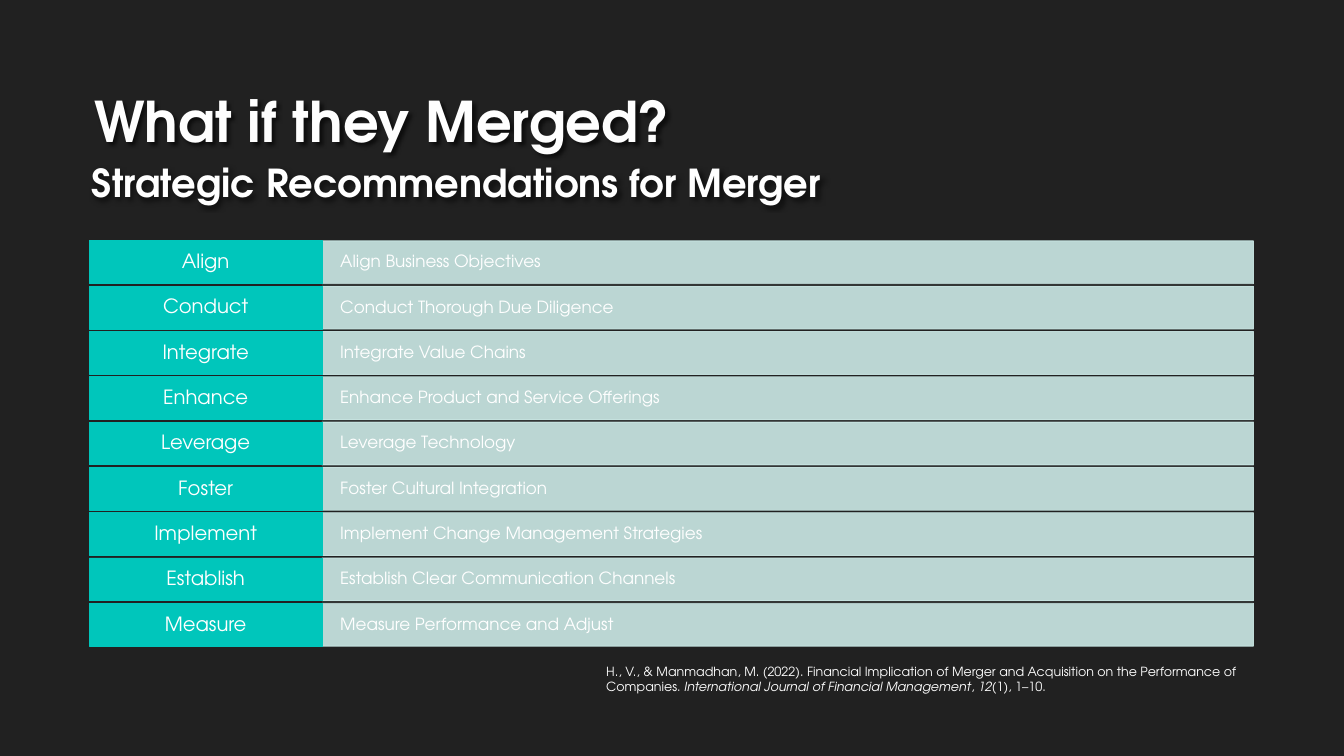
from dataclasses import dataclass

from lxml import etree
from pptx import Presentation
from pptx.dml.color import RGBColor
from pptx.enum.shapes import MSO_SHAPE
from pptx.enum.text import MSO_ANCHOR, MSO_AUTO_SIZE, PP_ALIGN
from pptx.oxml.ns import qn
from pptx.util import Pt

RECT = MSO_SHAPE.RECTANGLE
LEFT, CENTER = PP_ALIGN.LEFT, PP_ALIGN.CENTER
MIDDLE, BOTTOM, TOP = MSO_ANCHOR.MIDDLE, MSO_ANCHOR.BOTTOM, MSO_ANCHOR.TOP
NO_AUTOFIT, GROW = MSO_AUTO_SIZE.NONE, MSO_AUTO_SIZE.SHAPE_TO_FIT_TEXT

FONT = "TeX Gyre Adventor"
COLORS = {
    "background": "212121",
    "title": "FEFEFE",
    "text": "FFFFFF",
    "action": "00C6BB",
    "detail": "CCEAE7",
    "shadow": "000000",
}
MARGIN = 127.44
TABLE_TOP = 344.16
ROW_HEIGHT = 61.2
ROW_PITCH = 64.71


@dataclass(frozen=True)
class Column:
    left: float
    width: float
    color: str
    opacity: int
    size: int
    align: PP_ALIGN
    inset_x: float
    inset_y: float


@dataclass(frozen=True)
class Recommendation:
    action: str
    detail: str


ACTION = Column(MARGIN, 332.64, "action", 100, 28, CENTER, 17.28, 5.76)
DETAIL = Column(MARGIN + 332.64, 1330.56, "detail", 90, 24, LEFT, 25.92, 15.84)

RECOMMENDATIONS = [
    Recommendation("Align", "Align Business Objectives"),
    Recommendation("Conduct", "Conduct Thorough Due Diligence"),
    Recommendation("Integrate", "Integrate Value Chains"),
    Recommendation("Enhance", "Enhance Product and Service Offerings"),
    Recommendation("Leverage", "Leverage Technology"),
    Recommendation("Foster", "Foster Cultural Integration"),
    Recommendation("Implement", "Implement Change Management Strategies"),
    Recommendation("Establish", "Establish Clear Communication Channels"),
    Recommendation("Measure", "Measure Performance and Adjust"),
]

CITATION = [
    ("H., V., & Manmadhan, M. (2022). Financial Implication of Merger and "
     "Acquisition on the Performance of Companies. ", False),
    ("International Journal of Financial Management", True),
    (", ", False),
    ("12", True),
    ("(1), 1–10.", False),
]


def rgb(name: str) -> RGBColor:
    return RGBColor.from_string(COLORS[name])


def style_font(font, size: float, color: str = "text", bold: bool = False) -> None:
    font.name = FONT
    font.size = Pt(size)
    font.bold = bold
    font.color.rgb = rgb(color)


def set_frame(frame, anchor: MSO_ANCHOR, inset_x: float, inset_y: float,
              autofit: MSO_AUTO_SIZE = NO_AUTOFIT) -> None:
    frame.word_wrap = True
    frame.auto_size = autofit
    frame.vertical_anchor = anchor
    frame.margin_left = frame.margin_right = Pt(inset_x)
    frame.margin_top = frame.margin_bottom = Pt(inset_y)


def set_opacity(fill_owner, percent: int) -> None:
    for color in fill_owner.iter(qn("a:srgbClr")):
        etree.SubElement(color, qn("a:alpha"), val=str(percent * 1000))


def add_text_shadow(heading) -> None:
    heading.shadow.inherit = False
    effects = heading._element.spPr.find(qn("a:effectLst"))
    shadow = etree.SubElement(
        effects, qn("a:outerShdw"), blurRad=str(Pt(4)), dist=str(Pt(4)),
        dir="2700000", algn="tl", rotWithShape="0")
    color = etree.SubElement(shadow, qn("a:srgbClr"), val=COLORS["shadow"])
    etree.SubElement(color, qn("a:alpha"), val="60000")


def format_heading(heading, text: str, size: float, color: str) -> None:
    heading.text_frame.text = text
    paragraph = heading.text_frame.paragraphs[0]
    paragraph.alignment = LEFT
    style_font(paragraph.runs[0].font, size, color, bold=True)
    add_text_shadow(heading)


def add_cell(group, column: Column, top: float, text: str) -> None:
    cell = group.shapes.add_shape(
        RECT, Pt(column.left), Pt(top), Pt(column.width), Pt(ROW_HEIGHT))
    cell.shadow.inherit = False
    cell.fill.solid()
    cell.fill.fore_color.rgb = rgb(column.color)
    cell.line.color.rgb = rgb(column.color)
    cell.line.width = Pt(1.25)
    if column.opacity < 100:
        set_opacity(cell._element.spPr, column.opacity)
    set_frame(cell.text_frame, MIDDLE, column.inset_x, column.inset_y)
    cell.text_frame.text = text
    paragraph = cell.text_frame.paragraphs[0]
    paragraph.alignment = column.align
    paragraph.line_spacing = 0.9
    style_font(paragraph.runs[0].font, column.size)


def add_citation(slide) -> None:
    citation = slide.shapes.add_textbox(Pt(858.96), Pt(944.64), Pt(959.76), Pt(51.12))
    set_frame(citation.text_frame, TOP, 7.2, 3.6, GROW)
    paragraph = citation.text_frame.paragraphs[0]
    for text, italic in CITATION:
        run = paragraph.add_run()
        run.text = text
        style_font(run.font, 18)
        run.font.italic = italic


def main() -> None:
    presentation = Presentation()
    presentation.slide_width = Pt(1920)
    presentation.slide_height = Pt(1080)
    slide = presentation.slides.add_slide(presentation.slide_layouts[5])
    slide.background.fill.solid()
    slide.background.fill.fore_color.rgb = rgb("background")

    title = slide.shapes.title
    title.left, title.top = Pt(MARGIN), Pt(70.56)
    title.width, title.height = Pt(1664.64), Pt(152.64)
    set_frame(title.text_frame, BOTTOM, 7.2, 3.6)
    format_heading(title, "What if they Merged?", 80, "title")

    subtitle = slide.shapes.add_textbox(Pt(MARGIN), Pt(223.2), Pt(1730.16), Pt(73.44))
    set_frame(subtitle.text_frame, MIDDLE, 3.6, 3.6)
    format_heading(subtitle, "Strategic Recommendations for Merger", 55, "text")

    table = slide.shapes.add_group_shape()
    for index, recommendation in enumerate(RECOMMENDATIONS):
        top = TABLE_TOP + index * ROW_PITCH
        add_cell(table, DETAIL, top, recommendation.detail)
        add_cell(table, ACTION, top, recommendation.action)

    add_citation(slide)
    presentation.save("out.pptx")


if __name__ == "__main__":
    main()
